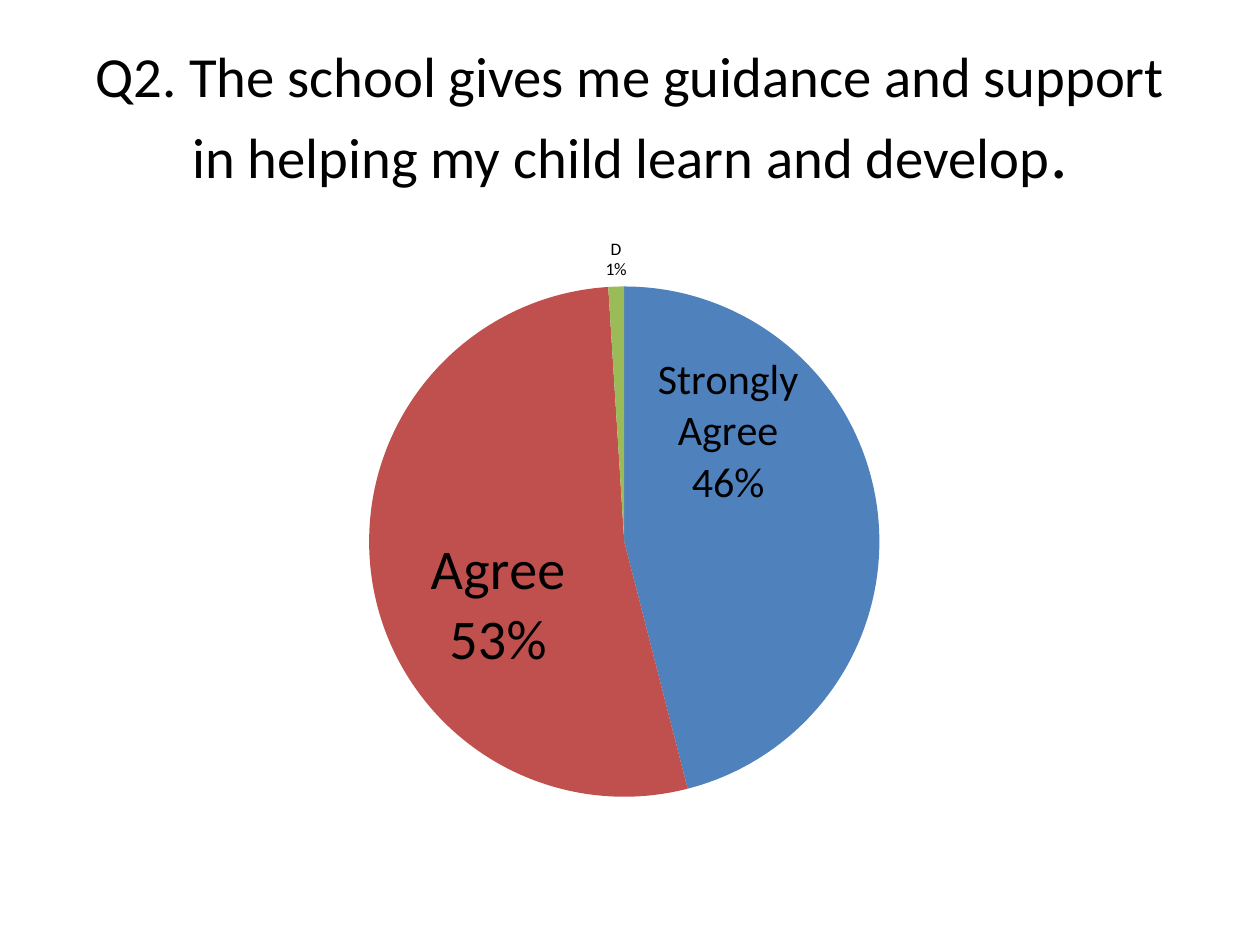
"""Build the Q2 survey slide: a question title above a labelled pie chart."""
import lxml.etree
import pptx
import pptx.chart.data
import pptx.dml.color
import pptx.enum.chart
import pptx.enum.text
import pptx.oxml.ns
import pptx.util

Inches = pptx.util.Inches
Pt = pptx.util.Pt
RGBColor = pptx.dml.color.RGBColor
Position = pptx.enum.chart.XL_LABEL_POSITION
qn = pptx.oxml.ns.qn

FONT = "Calibri"
BLACK = RGBColor(0x00, 0x00, 0x00)
BLUE = RGBColor(0x4F, 0x81, 0xBD)
RED = RGBColor(0xC0, 0x50, 0x4D)
GREEN = RGBColor(0x9B, 0xBB, 0x59)
PURPLE = RGBColor(0x80, 0x64, 0xA2)

TITLE_RUNS = [
    ("Q2. The school gives me guidance and support in helping my child learn and develop", 32.4),
    (".", 39.6),
]
ANSWERS = [("SA", 46, BLUE), ("A", 53, RED), ("D", 1, GREEN), ("SD", 0, PURPLE)]
LABELS = [
    (0, ["Strongly Agree", "46%"], 24, {"x": -0.02, "y": -0.15}),
    (1, ["Agree", "53%"], 32, {"x": 0, "y": 0.07}),
]
EMPTY_ANSWER = 3
PLOT_AREA = {"x": 0.27, "y": 0.1, "w": 0.45, "h": 0.83}


def style(font, size):
    font.name = FONT
    font.size = Pt(size)
    font.color.rgb = BLACK


def make_layout(fractions, inner=False):
    layout = lxml.etree.Element(qn("c:layout"))
    manual = lxml.etree.SubElement(layout, qn("c:manualLayout"))
    settings = [("layoutTarget", "inner"), ("xMode", "edge"), ("yMode", "edge")] if inner else []
    for name, value in settings + list(fractions.items()):
        lxml.etree.SubElement(manual, qn(f"c:{name}")).set("val", str(value))
    return layout


def add_title(slide):
    shape = slide.shapes.add_textbox(Inches(0.5), Inches(0.3), Inches(9), Inches(1.25))
    frame = shape.text_frame
    frame.word_wrap = True
    frame.vertical_anchor = pptx.enum.text.MSO_ANCHOR.MIDDLE
    paragraph = frame.paragraphs[0]
    paragraph.alignment = pptx.enum.text.PP_ALIGN.CENTER
    for text, size in TITLE_RUNS:
        run = paragraph.add_run()
        run.text = text
        style(run.font, size)


def add_labels(series):
    labels = series.data_labels
    labels.show_percentage = True
    labels.show_category_name = True
    labels.show_value = False
    labels.show_legend_key = False
    labels.position = Position.OUTSIDE_END
    style(labels.font, 10)
    for index, lines, size, offset in LABELS:
        label = series.points[index].data_label
        frame = label.text_frame
        for number, line in enumerate(lines):
            paragraph = frame.add_paragraph() if number else frame.paragraphs[0]
            run = paragraph.add_run()
            run.text = line
            style(run.font, size)
        label.position = Position.CENTER
        element = labels._element.xpath(f"c:dLbl[c:idx/@val='{index}']")[0]
        element.insert(1, make_layout(offset))
    series.points[EMPTY_ANSWER].data_label.position = Position.OUTSIDE_END
    hidden = labels._element.xpath(f"c:dLbl[c:idx/@val='{EMPTY_ANSWER}']")[0]
    for child in list(hidden)[1:]:
        hidden.remove(child)
    lxml.etree.SubElement(hidden, qn("c:delete")).set("val", "1")


def add_pie(slide):
    data = pptx.chart.data.CategoryChartData()
    data.categories = [name for name, value, color in ANSWERS]
    data.add_series("Series 1", [value for name, value, color in ANSWERS])
    chart = slide.shapes.add_chart(
        pptx.enum.chart.XL_CHART_TYPE.PIE,
        Inches(0.5), Inches(1.75), Inches(9), Inches(4.95), data,
    ).chart
    chart.has_title = False
    chart.has_legend = False
    style(chart.font, 10)
    plot = chart.plots[0]
    plot.vary_by_categories = True
    series = plot.series[0]
    for index, (name, value, color) in enumerate(ANSWERS):
        fill = series.points[index].format.fill
        fill.solid()
        fill.fore_color.rgb = color
    add_labels(series)
    plot_area = chart._chartSpace.xpath("c:chart/c:plotArea")[0]
    for layout in plot_area.findall(qn("c:layout")):
        plot_area.remove(layout)
    plot_area.insert(0, make_layout(PLOT_AREA, inner=True))


def main():
    presentation = pptx.Presentation()
    presentation.slide_width = Inches(10)
    presentation.slide_height = Inches(7.5)
    slide = presentation.slides.add_slide(presentation.slide_layouts[6])
    add_title(slide)
    add_pie(slide)
    presentation.save("out.pptx")


if __name__ == "__main__":
    main()
